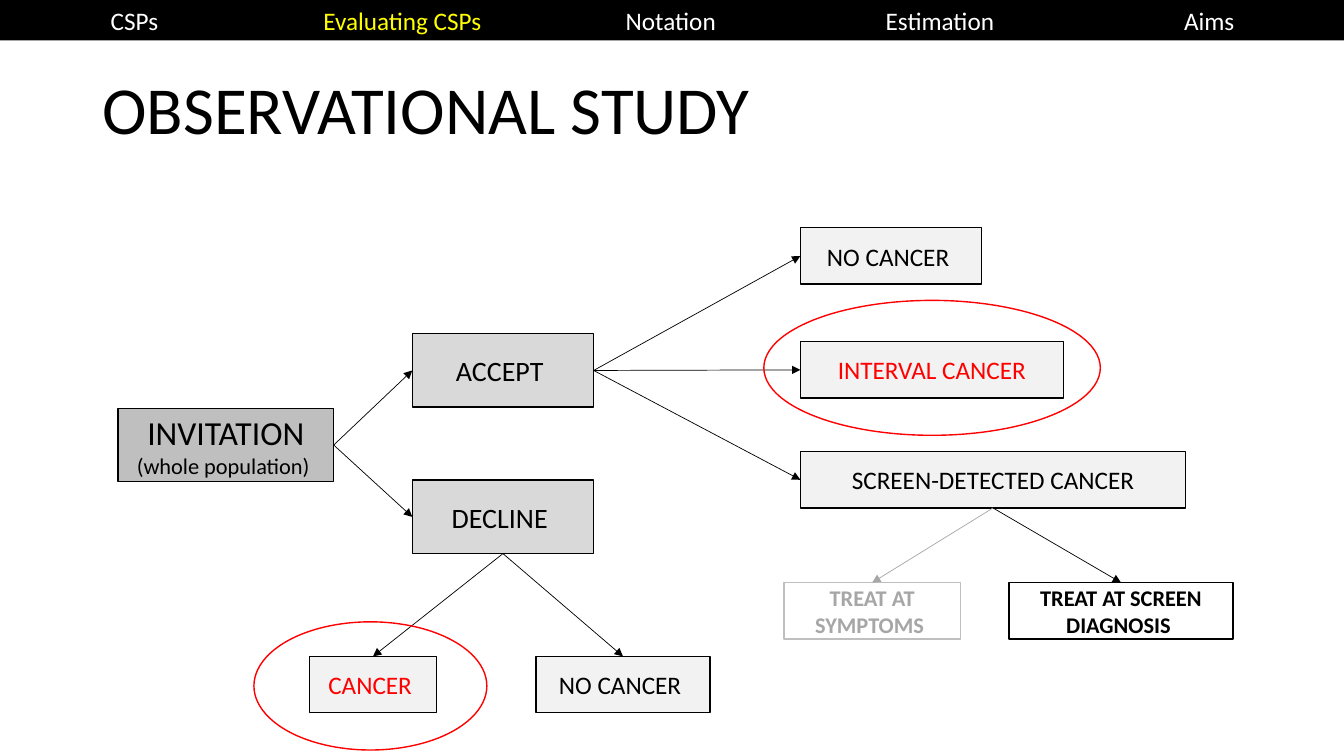
from lxml import etree
from pptx import Presentation
from pptx.dml.color import RGBColor
from pptx.enum.shapes import MSO_CONNECTOR, MSO_SHAPE
from pptx.enum.text import MSO_ANCHOR, MSO_AUTO_SIZE, PP_ALIGN
from pptx.oxml.ns import qn
from pptx.util import Cm, Pt

COLORS = {
    "black": "000000", "white": "FFFFFF", "red": "FF0000", "yellow": "FFFF00",
    "root": "BFBFBF", "choice": "D9D9D9", "outcome": "F2F2F2",
    "faded": "A6A6A6", "faded_border": "BFBFBF",
}
BOTTOM, LEFT, RIGHT, TOP = 2, 1, 3, 0


def color(name):
    return RGBColor.from_string(COLORS[name])


def write(shape, text, size, ink="black", bold=False, align=PP_ALIGN.CENTER,
          anchor=MSO_ANCHOR.MIDDLE, wrap=True, spacing=None):
    """Add one paragraph, filling the empty first paragraph before appending."""
    frame = shape.text_frame
    frame.word_wrap = wrap
    frame.vertical_anchor = anchor
    paragraph = frame.add_paragraph() if frame.text else frame.paragraphs[0]
    paragraph.alignment = align
    paragraph.line_spacing = spacing
    run = paragraph.add_run()
    run.text = text
    run.font.name = "Calibri"
    run.font.size = Pt(size)
    run.font.bold = bold
    run.font.color.rgb = color(ink)


presentation = Presentation()
presentation.slide_width = Cm(33.87)
presentation.slide_height = Cm(19.05)
slide = presentation.slides.add_slide(presentation.slide_layouts[6])
shapes = slide.shapes

title = shapes.add_textbox(Cm(2.33), Cm(1.01), Cm(29.21), Cm(3.68))
write(title, "OBSERVATIONAL STUDY", 48, align=PP_ALIGN.LEFT, spacing=0.9)

# Boxes of the tree: key, left, top, width, height, fill, border, text, size, ink, bold
TALL, LOW = 1.85, 1.42
CHOICE_X, OUTCOME_X = 10.39, 20.17
DECLINED_Y, TREAT_Y = 16.54, 14.68
boxes = {}
for key, left, top, width, height, fill, border, text, size, ink, bold in [
    ("invitation", 2.97, 10.29, 5.44, TALL, "root", "black", "INVITATION", 24, "black", False),
    ("accept", CHOICE_X, 8.41, 4.57, TALL, "choice", "black", "ACCEPT ", 20, "black", False),
    ("decline", CHOICE_X, 12.1, 4.57, TALL, "choice", "black", "DECLINE ", 20, "black", False),
    ("cancer", 7.8, DECLINED_Y, 3.2, LOW, "outcome", "black", "CANCER ", 18, "red", False),
    ("healthy", 13.51, DECLINED_Y, 4.38, LOW, "outcome", "black", "NO CANCER ", 18, "black", False),
    ("negative", OUTCOME_X, 5.74, 4.57, LOW, "outcome", "black", "NO CANCER ", 18, "black", False),
    ("interval", OUTCOME_X, 8.61, 6.63, LOW, "outcome", "black", "INTERVAL CANCER", 18, "red", False),
    ("screen", OUTCOME_X, 11.38, 9.71, LOW, "outcome", "black",
     "SCREEN-DETECTED CANCER", 18, "black", False),
    ("symptoms", 19.76, TREAT_Y, 4.44, LOW, "white", "faded_border",
     "TREAT AT SYMPTOMS ", 16, "faded", True),
    ("diagnosis", 25.43, TREAT_Y, 5.64, LOW, "white", "black",
     "TREAT AT SCREEN DIAGNOSIS ", 16, "black", True),
]:
    box = shapes.add_shape(MSO_SHAPE.RECTANGLE, Cm(left), Cm(top), Cm(width), Cm(height))
    box.shadow.inherit = False
    box.fill.solid()
    box.fill.fore_color.rgb = color(fill)
    box.line.color.rgb = color(border)
    box.line.width = Pt(1)
    write(box, text, size, ink, bold)
    boxes[key] = box
write(boxes["invitation"], "(whole population) ", 16)

for start, end, start_side, end_side, ink in [
    ("invitation", "accept", RIGHT, LEFT, "black"),
    ("invitation", "decline", RIGHT, LEFT, "black"),
    ("accept", "negative", RIGHT, LEFT, "black"),
    ("accept", "interval", RIGHT, LEFT, "black"),
    ("accept", "screen", RIGHT, LEFT, "black"),
    ("decline", "cancer", BOTTOM, TOP, "black"),
    ("decline", "healthy", BOTTOM, TOP, "black"),
    ("screen", "diagnosis", BOTTOM, TOP, "black"),
    ("screen", "symptoms", BOTTOM, TOP, "faded"),
]:
    arrow = shapes.add_connector(MSO_CONNECTOR.STRAIGHT, 0, 0, 0, 0)
    arrow.begin_connect(boxes[start], start_side)
    arrow.end_connect(boxes[end], end_side)
    arrow.line.color.rgb = color(ink)
    arrow.line.width = Pt(0.5)
    etree.SubElement(arrow.line._get_or_add_ln(), qn("a:tailEnd"), type="triangle")
    etree.SubElement(arrow._element.spPr, qn("a:effectLst"))

for left, top, width, height in [(19.25, 7.57, 8.48, 3.4), (6.4, 15.67, 5.87, 3.23)]:
    highlight = shapes.add_shape(MSO_SHAPE.OVAL, Cm(left), Cm(top), Cm(width), Cm(height))
    highlight.shadow.inherit = False
    highlight.fill.background()
    highlight.line.color.rgb = color("red")
    highlight.line.width = Pt(1)

BAR_HEIGHT = Cm(1.02)
bar = shapes.add_shape(MSO_SHAPE.RECTANGLE, 0, 0, presentation.slide_width, BAR_HEIGHT)
bar.shadow.inherit = False
bar.fill.solid()
bar.fill.fore_color.rgb = color("black")
bar.line.fill.background()
for text, left, width, ink in [
    ("CSPs", 2.54, 1.73, "white"),
    ("Evaluating CSPs", 7.9, 4.55, "yellow"),
    ("Notation", 15.52, 2.82, "white"),
    ("Estimation", 22.07, 3.28, "white"),
    ("Aims", 29.59, 1.8, "white"),
]:
    section = shapes.add_textbox(Cm(left), 0, Cm(width), BAR_HEIGHT)
    write(section, text, 18, ink, align=PP_ALIGN.LEFT, anchor=MSO_ANCHOR.TOP, wrap=False)
    section.text_frame.auto_size = MSO_AUTO_SIZE.SHAPE_TO_FIT_TEXT

presentation.save("out.pptx")
